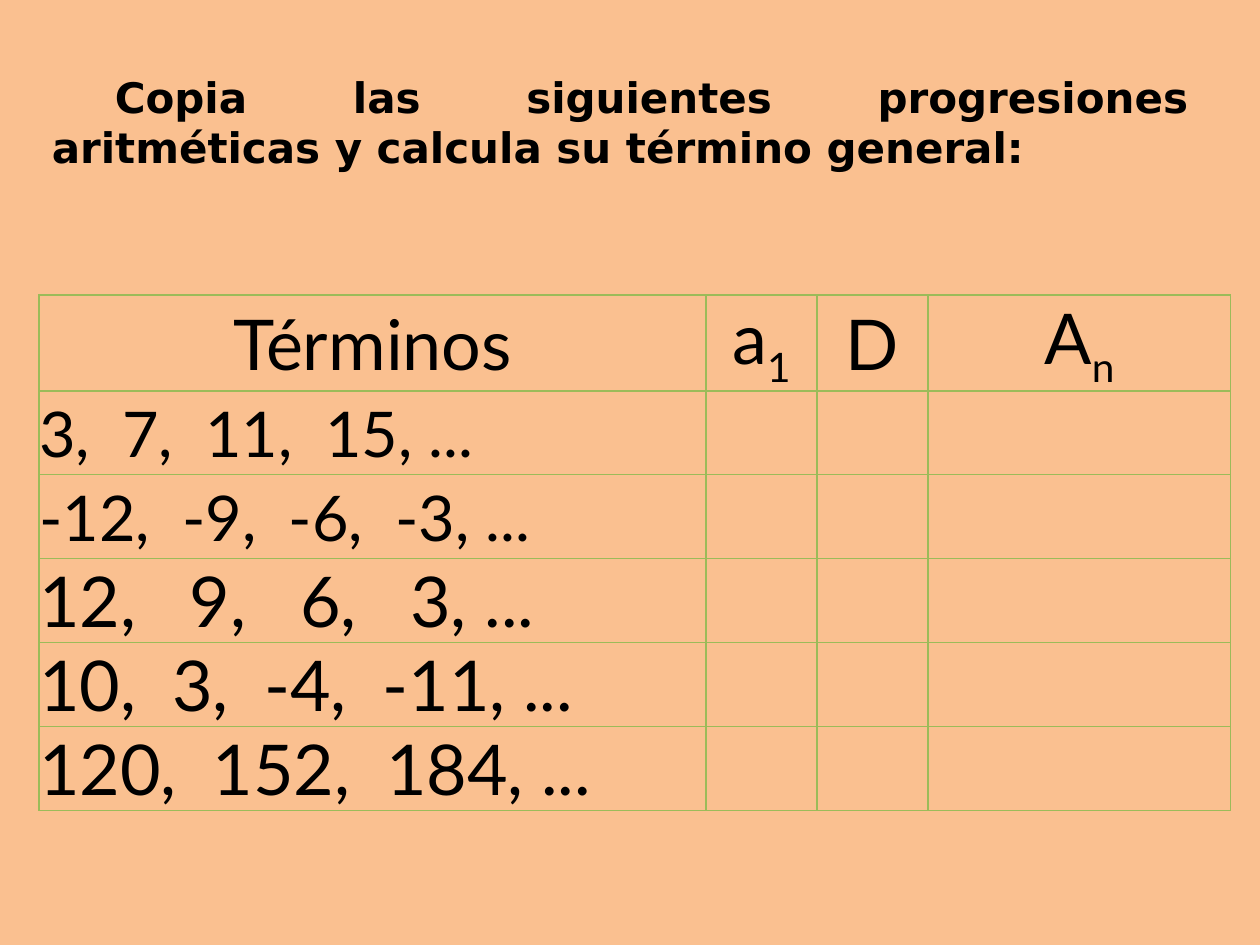
from lxml import etree
from pptx import Presentation
from pptx.dml.color import RGBColor
from pptx.enum.text import MSO_ANCHOR, MSO_AUTO_SIZE, PP_ALIGN
from pptx.oxml.ns import qn
from pptx.util import Cm, Pt

MIDDLE = MSO_ANCHOR.MIDDLE
GROW = MSO_AUTO_SIZE.SHAPE_TO_FIT_TEXT
LEFT, CENTER, JUSTIFY = PP_ALIGN.LEFT, PP_ALIGN.CENTER, PP_ALIGN.JUSTIFY

COLORS = {"back": "FAC090", "text": "000000", "line": "9BBB59"}
HEADS = [("Términos", ""), ("a", "1"), ("D", ""), ("A", "n")]
TERMS = [
    ("3,  7,  11,  15, ...", 36),
    ("-12,  -9,  -6,  -3, ...", 36),
    ("12,   9,   6,   3, ...", 40),
    ("10,  3,  -4,  -11, ...", 40),
    ("120,  152,  184, ...", 40),
]
WIDTHS = [13.44, 2.24, 2.24, 6.1]
HEAD_H, ROW_H = 1.93, 1.69


def rgb(name):
    return RGBColor.from_string(COLORS[name])


def write(para, text, font="Lato", size=40, bold=False, align=LEFT, base=0):
    para.alignment = align
    run = para.add_run()
    run.text = text
    run.font.name = font
    run.font.size = Pt(size)
    run.font.bold = bold
    run.font.color.rgb = rgb("text")
    if base:
        run._r.get_or_add_rPr().set("baseline", str(base * 1000))


class Deck:
    def __init__(self):
        self.prs = Presentation()
        self.prs.slide_width, self.prs.slide_height = Cm(25.4), Cm(19.05)
        self.slide = self.prs.slides.add_slide(self.prs.slide_layouts[5])
        fill = self.slide.background.fill
        fill.solid()
        fill.fore_color.rgb = rgb("back")

    def title(self, text, left, top, width, height, **style):
        box = self.slide.shapes.title
        box.left, box.top = Cm(left), Cm(top)
        box.width, box.height = Cm(width), Cm(height)
        frame = box.text_frame
        frame.word_wrap = True
        frame.auto_size = GROW
        frame.vertical_anchor = MIDDLE
        write(frame.paragraphs[0], text, **style)

    def border(self, cell):
        props = cell._tc.get_or_add_tcPr()
        for side in ("lnL", "lnR", "lnT", "lnB"):
            line = etree.SubElement(props, qn(f"a:{side}"), w=str(Pt(1)))
            fill = etree.SubElement(line, qn("a:solidFill"))
            etree.SubElement(fill, qn("a:srgbClr"), val=COLORS["line"])

    def table(self, left, top, widths, heights):
        frame = self.slide.shapes.add_table(
            len(heights), len(widths), Cm(left), Cm(top),
            Cm(sum(widths)), Cm(sum(heights)))
        table = frame.table
        table.first_row = table.horz_banding = False
        for col, width in zip(table.columns, widths):
            col.width = Cm(width)
        for row, height in zip(table.rows, heights):
            row.height = Cm(height)
        for cell in table.iter_cells():
            cell.margin_left = cell.margin_right = 0
            cell.margin_top = cell.margin_bottom = 0
            cell.vertical_anchor = MIDDLE
            self.border(cell)
            cell.fill.background()
        return table


def main():
    deck = Deck()
    deck.title(
        "\tCopia las siguientes progresiones aritméticas y calcula su término general:",
        0.79, 1.3, 23.42, 2.31, font="DejaVu Sans", size=24, bold=True, align=JUSTIFY)
    heights = [HEAD_H] + [ROW_H] * len(TERMS)
    table = deck.table(0.79, 5.95, WIDTHS, heights)
    for col, (name, sub) in enumerate(HEADS):
        para = table.cell(0, col).text_frame.paragraphs[0]
        write(para, name, align=CENTER)
        if sub:
            write(para, sub, align=CENTER, base=-25)
    for row, (text, size) in enumerate(TERMS, 1):
        write(table.cell(row, 0).text_frame.paragraphs[0], text, size=size)
    deck.prs.save("out.pptx")


if __name__ == "__main__":
    main()
